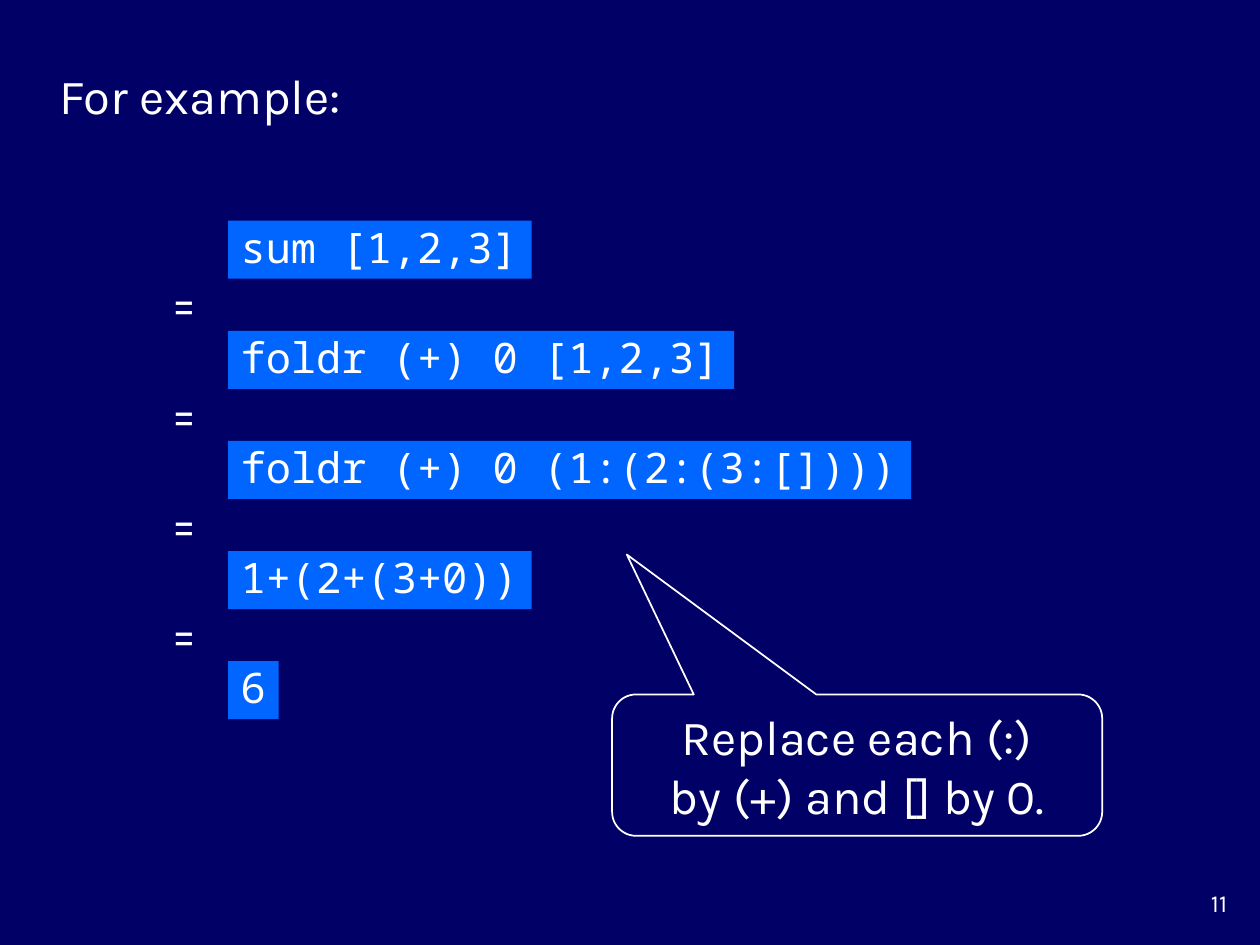
from pptx import Presentation
from pptx.dml.color import RGBColor
from pptx.enum import shapes, text
from pptx.util import Cm, Pt

BACKGROUND, BOX_BLUE, WHITE = "000066", "0066FF", "FFFFFF"
BODY_FONT, CODE_FONT = "Karla", "Noto Sans Mono"
EXPRESSIONS = [
    "sum [1,2,3]",
    "foldr (+) 0 [1,2,3]",
    "foldr (+) 0 (1:(2:(3:[])))",
    "1+(2+(3+0))",
    "6",
]
FIRST_TOP, STEP = 4.45, 2.22
CHARACTER_WIDTH, SIDE_MARGINS = 0.51, 0.51


def color(value):
    """Turn a hex string into a colour."""
    return RGBColor.from_string(value)


def write(shape, content, size, font=BODY_FONT, align=text.PP_ALIGN.LEFT,
          anchor=text.MSO_ANCHOR.MIDDLE, wrap=True, spacing=None):
    """Put formatted white text into a shape."""
    frame = shape.text_frame
    frame.text = content
    frame.word_wrap = wrap
    frame.auto_size = text.MSO_AUTO_SIZE.NONE
    frame.vertical_anchor = anchor
    for paragraph in frame.paragraphs:
        paragraph.alignment = align
        paragraph.line_spacing = spacing
        for run in paragraph.runs:
            run.font.name = font
            run.font.size = Pt(size)
            run.font.color.rgb = color(WHITE)


def add_title(slide, content):
    """Place and format the title placeholder."""
    title = slide.shapes.title
    title.left, title.top = Cm(0.94), Cm(1.19)
    title.width, title.height = Cm(22.5), Cm(1.45)
    write(title, content, 28)


def add_code(container, expression, top):
    """Add a blue box as wide as its expression."""
    width = SIDE_MARGINS + CHARACTER_WIDTH * len(expression)
    box = container.add_shape(shapes.MSO_SHAPE.RECTANGLE,
                              Cm(4.6), Cm(top), Cm(width), Cm(1.17))
    box.shadow.inherit = False
    box.fill.solid()
    box.fill.fore_color.rgb = color(BOX_BLUE)
    box.line.fill.background()
    write(box, expression, 24, CODE_FONT, wrap=False, spacing=0.9)


def add_step(slide, expression, top):
    """Group an equals sign with the expression below it."""
    group = slide.shapes.add_group_shape()
    add_code(group.shapes, expression, top)
    sign = group.shapes.add_textbox(Cm(3.1), Cm(top - 1.32), Cm(1.22), Cm(1.45))
    write(sign, "=", 28, align=text.PP_ALIGN.CENTER, wrap=False)


def add_callout(slide, content):
    """Add the outlined callout pointing at the list expression."""
    callout = slide.shapes.add_shape(shapes.MSO_SHAPE.ROUNDED_RECTANGULAR_CALLOUT,
                                     Cm(12.34), Cm(14), Cm(9.88), Cm(2.85))
    callout.adjustments[0] = -0.47
    callout.adjustments[1] = -1.49
    callout.adjustments[2] = 0.17
    callout.shadow.inherit = False
    callout.fill.background()
    callout.line.color.rgb = color(WHITE)
    callout.line.width = Pt(1)
    write(callout, content, 28, align=text.PP_ALIGN.CENTER)


def add_page_number(slide, number):
    """Add the page number in the bottom right corner."""
    box = slide.shapes.add_textbox(Cm(23.29), Cm(17.78), Cm(1.7), Cm(0.85))
    write(box, number, 14, align=text.PP_ALIGN.RIGHT, anchor=text.MSO_ANCHOR.TOP)


def main():
    """Build the slide and save it."""
    presentation = Presentation()
    presentation.slide_width, presentation.slide_height = Cm(25.4), Cm(19.05)
    slide = presentation.slides.add_slide(presentation.slide_layouts[5])
    slide.background.fill.solid()
    slide.background.fill.fore_color.rgb = color(BACKGROUND)
    add_title(slide, "For example:")
    add_code(slide.shapes, EXPRESSIONS[0], FIRST_TOP)
    for index, expression in enumerate(EXPRESSIONS[1:], 1):
        add_step(slide, expression, FIRST_TOP + index * STEP)
    add_callout(slide, "Replace each (:)\nby (+) and [] by 0.")
    add_page_number(slide, "11")
    presentation.save("out.pptx")


if __name__ == "__main__":
    main()
